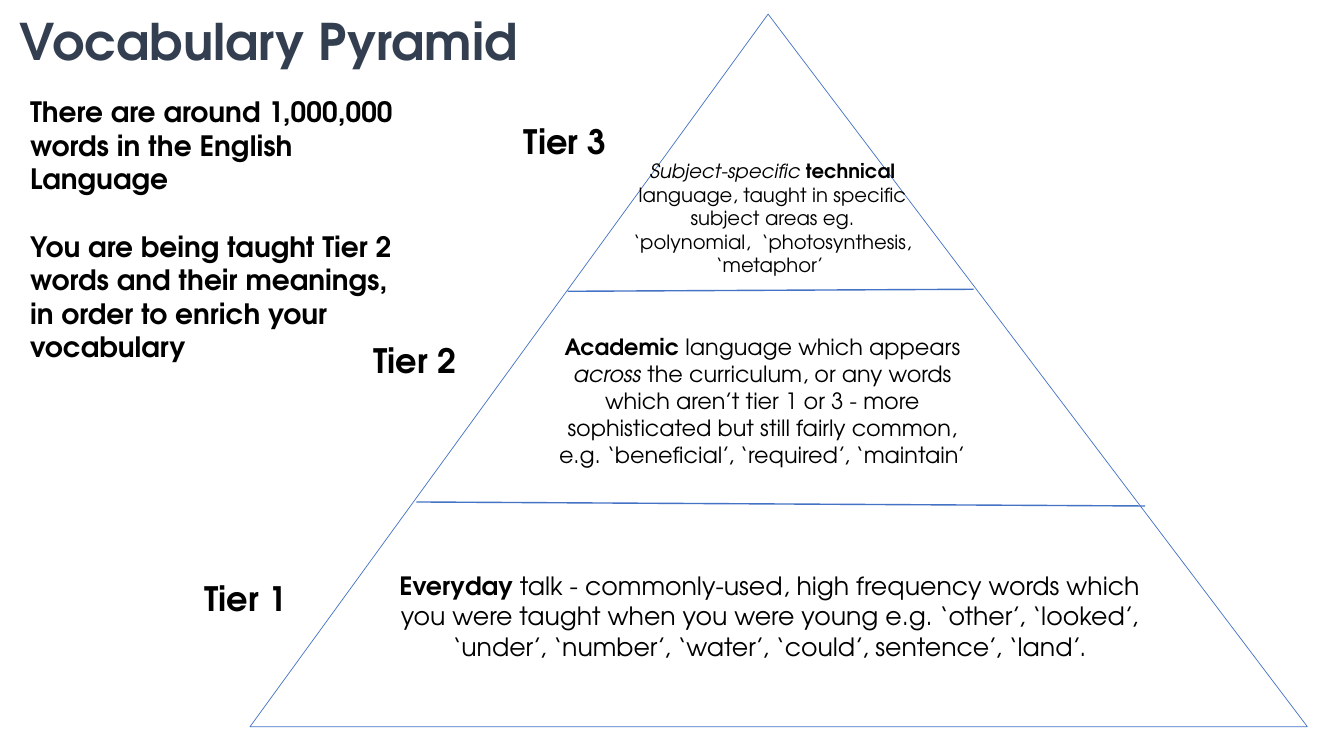
import dataclasses
import typing

import lxml.etree
import pptx
import pptx.dml.color
import pptx.enum.shapes
import pptx.enum.text
import pptx.oxml.ns
import pptx.slide
import pptx.util

FONT = "TeX Gyre Adventor"
SLATE = pptx.dml.color.RGBColor(0x33, 0x3F, 0x50)
BLACK = pptx.dml.color.RGBColor(0x00, 0x00, 0x00)
WHITE = pptx.dml.color.RGBColor(0xFF, 0xFF, 0xFF)
BLUE = pptx.dml.color.RGBColor(0x44, 0x72, 0xC4)

LEFT = pptx.enum.text.PP_ALIGN.LEFT
CENTER = pptx.enum.text.PP_ALIGN.CENTER

# Grid of square cells, ten to the inch
COLUMNS, ROWS = 133.33, 75
LABEL_WIDTH, LABEL_HEIGHT = 13.6, 5


class Area(typing.NamedTuple):
    """A place on the grid, in columns and rows."""
    column: float
    row: float
    columns: float
    rows: float


class Divider(typing.NamedTuple):
    start_column: float
    start_row: float
    end_column: float
    end_row: float


class Words(typing.NamedTuple):
    text: str
    bold: bool = False
    italic: bool = False


@dataclasses.dataclass(frozen=True)
class TextBlock:
    area: Area
    size: float
    paragraphs: list[list[Words]]
    color: pptx.dml.color.RGBColor = BLACK
    alignment: pptx.enum.text.PP_ALIGN = LEFT
    space_before: float = 0
    gap: float = 0
    line_spacing: float = 1.0
    grows: bool = True


@dataclasses.dataclass(frozen=True)
class Tier:
    name: str
    label_column: float
    label_row: float
    area: Area
    size: float
    description: list[Words]


TITLE = TextBlock(Area(1, 1.2, 96.6, 10.3), 36, [[Words("Vocabulary Pyramid", bold=True)]],
                  color=SLATE, space_before=10, line_spacing=0.9, grows=False)

INTRODUCTION = TextBlock(
    Area(2, 8.9, 39.5, 27.9), 20,
    [[Words("There are around 1,000,000 words in the English Language", bold=True)],
     [Words("You are being taught Tier 2 words and their meanings, "
            "in order to enrich your vocabulary", bold=True)]],
    gap=24)

PYRAMID = Area(24.8, 1.4, 104.9, 70.7)
APEX = 0.49
DIVIDERS = [Divider(56.3, 28.9, 96.6, 28.7), Divider(41.3, 49.8, 113.6, 50.2)]

TIERS = [
    Tier("Tier 3", 51, 11.5, Area(61.5, 15.3, 30.3, 12.8), 14, [
        Words("Subject-specific ", italic=True),
        Words("technical", bold=True),
        Words(" language, taught in specific subject areas eg. "
              "‘polynomial,  ‘photosynthesis, ‘metaphor’ "),
    ]),
    Tier("Tier 2", 36.1, 33.2, Area(53.8, 32.6, 43.7, 14.5), 16, [
        Words("Academic", bold=True),
        Words(" language which appears "),
        Words("across", italic=True),
        Words(" the curriculum, or any words which aren’t tier 1 or 3 - more sophisticated "
              "but still fairly common, e.g. ‘beneficial’, ‘required’, ‘maintain’"),
    ]),
    Tier("Tier 1", 19.3, 56.8, Area(38, 56.1, 76.7, 10.1), 18, [
        Words("Everyday", bold=True),
        Words(" talk - commonly-used, high frequency words which you were taught when you were "
              "young e.g. ‘other’, ‘looked’, ‘under’, ‘number’, ‘water’, ‘could’, sentence’, "
              "‘land’."),
    ]),
]


def cells(count: float) -> pptx.util.Length:
    return pptx.util.Inches(count / 10)


def add_pyramid(slide: pptx.slide.Slide) -> None:
    triangle = slide.shapes.add_shape(
        pptx.enum.shapes.MSO_SHAPE.ISOSCELES_TRIANGLE, *map(cells, PYRAMID))
    triangle.adjustments[0] = APEX
    triangle.shadow.inherit = False
    triangle.fill.solid()
    triangle.fill.fore_color.rgb = WHITE
    triangle.line.color.rgb = BLUE
    triangle.line.width = pptx.util.Pt(0.5)


def add_divider(slide: pptx.slide.Slide, divider: Divider) -> None:
    connector = slide.shapes.add_connector(
        pptx.enum.shapes.MSO_CONNECTOR.STRAIGHT, *map(cells, divider))
    connector.line.color.rgb = BLUE
    connector.line.width = pptx.util.Pt(1)
    lxml.etree.SubElement(connector._element.spPr, pptx.oxml.ns.qn("a:effectLst"))


def add_text(slide: pptx.slide.Slide, block: TextBlock) -> None:
    text_frame = slide.shapes.add_textbox(*map(cells, block.area)).text_frame
    text_frame.word_wrap = True
    if block.grows:
        text_frame.auto_size = pptx.enum.text.MSO_AUTO_SIZE.SHAPE_TO_FIT_TEXT
    for index, line in enumerate(block.paragraphs):
        paragraph = text_frame.add_paragraph() if index else text_frame.paragraphs[0]
        paragraph.alignment = block.alignment
        paragraph.line_spacing = block.line_spacing
        paragraph.space_before = pptx.util.Pt(block.gap if index else block.space_before)
        for words in line:
            run = paragraph.add_run()
            run.text = words.text
            run.font.name = FONT
            run.font.size = pptx.util.Pt(block.size)
            run.font.bold = words.bold
            run.font.italic = words.italic
            run.font.color.rgb = block.color


def add_tier(slide: pptx.slide.Slide, tier: Tier) -> None:
    label_area = Area(tier.label_column, tier.label_row, LABEL_WIDTH, LABEL_HEIGHT)
    add_text(slide, TextBlock(label_area, 24, [[Words(tier.name, bold=True)]]))
    add_text(slide, TextBlock(tier.area, tier.size, [tier.description], alignment=CENTER))


def main() -> None:
    presentation = pptx.Presentation()
    presentation.slide_width = cells(COLUMNS)
    presentation.slide_height = cells(ROWS)
    slide = presentation.slides.add_slide(presentation.slide_layouts[6])
    add_text(slide, TITLE)
    add_pyramid(slide)
    for divider in DIVIDERS:
        add_divider(slide, divider)
    for tier in TIERS:
        add_tier(slide, tier)
    add_text(slide, INTRODUCTION)
    presentation.save("out.pptx")


if __name__ == "__main__":
    main()
